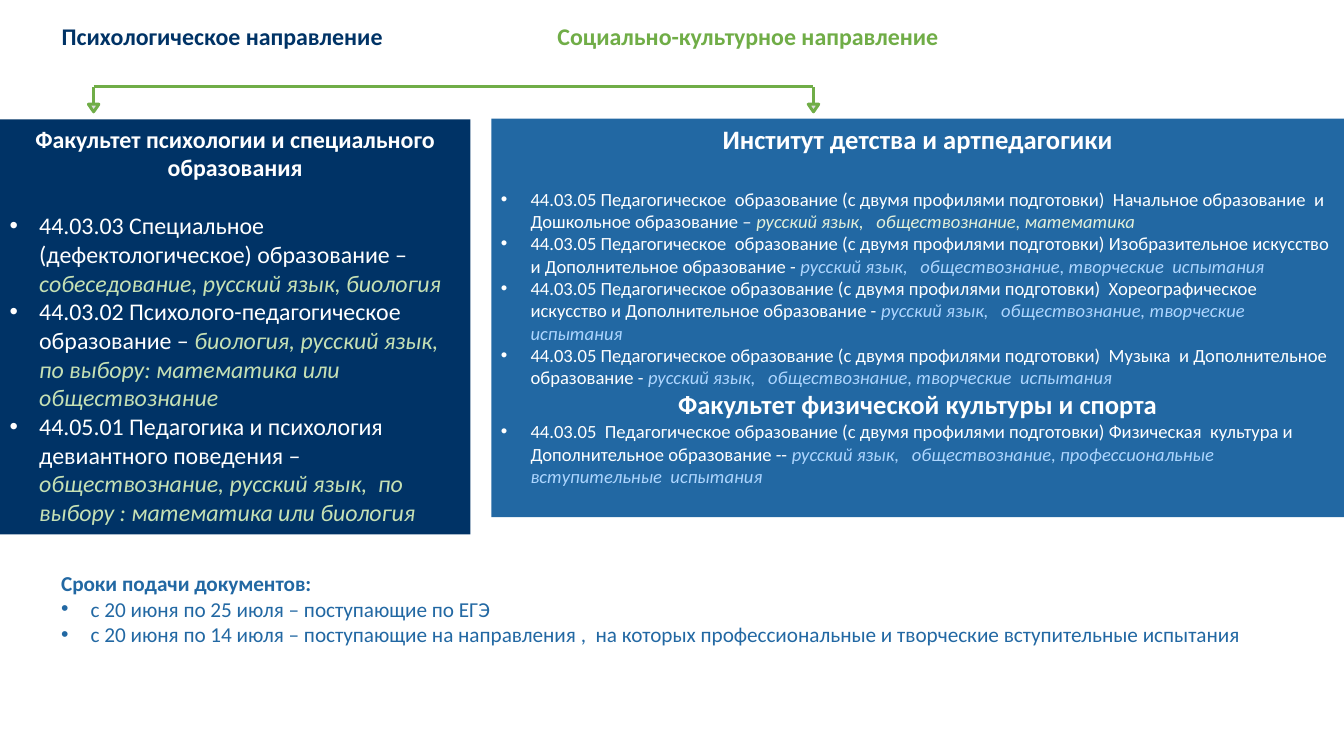
from lxml.etree import SubElement
from pptx import Presentation
from pptx.dml.color import RGBColor
from pptx.enum.shapes import MSO_CONNECTOR, MSO_SHAPE
from pptx.enum.text import MSO_ANCHOR, MSO_AUTO_SIZE, PP_ALIGN
from pptx.oxml.ns import qn
from pptx.util import Inches, Pt

NAVY = RGBColor(0x00, 0x33, 0x66)
BLUE = RGBColor(0x22, 0x68, 0xA3)
GREEN = RGBColor(0x70, 0xAD, 0x47)
SOFT_GREEN = RGBColor(0xC5, 0xE0, 0xB4)
PALE_GREEN = RGBColor(0xE2, 0xF0, 0xD9)
SKY = RGBColor(0xAD, 0xD6, 0xFF)
GREY = RGBColor(0xDE, 0xDE, 0xDE)
WHITE = RGBColor(0xFF, 0xFF, 0xFF)

DIRECTIONS = [
    (1, "Психологическое направление", NAVY, (0, 0.18, 4.65, 0.4)),
    (3, "Социально-культурное направление", GREEN, (5.65, 0.18, 4.35, 0.4)),
]

PSYCHOLOGY = [
    ("44.03.03 Специальное (дефектологическое) образование – ",
     "собеседование, русский язык, биология", SOFT_GREEN),
    ("44.03.02 Психолого-педагогическое образование – ",
     "биология, русский язык, по выбору: математика или обществознание", SOFT_GREEN),
    ("44.05.01 Педагогика и психология девиантного поведения – ",
     "обществознание, русский язык,  по выбору : математика или биология", SOFT_GREEN),
]
CHILDHOOD = [
    ("44.03.05 Педагогическое  образование (с двумя профилями подготовки)  "
     "Начальное образование  и Дошкольное образование – ",
     "русский язык,   обществознание, математика", PALE_GREEN),
    ("44.03.05 Педагогическое  образование (с двумя профилями подготовки) "
     "Изобразительное искусство и Дополнительное образование - ",
     "русский язык,   обществознание, творческие  испытания", SKY),
    ("44.03.05 Педагогическое образование (с двумя профилями подготовки)  "
     "Хореографическое искусство и Дополнительное образование - ",
     "русский язык,   обществознание, творческие  испытания", SKY),
    ("44.03.05 Педагогическое образование (с двумя профилями подготовки)  "
     "Музыка  и Дополнительное образование - ",
     "русский язык,   обществознание, творческие  испытания", SKY),
]
SPORT = [
    ("44.03.05  Педагогическое образование (с двумя профилями подготовки) "
     "Физическая  культура и Дополнительное образование -- ",
     "русский язык,   обществознание, профессиональные вступительные  испытания", SKY),
]
FACULTIES = [
    (2, NAVY, (0, 1.25, 4.92, 4.34), 18, 18, 22,
     [("Факультет психологии и специального образования", PSYCHOLOGY)]),
    (4, BLUE, (5.14, 1.24, 8.92, 4.17), 20, 14, 24.4,
     [("Институт детства и артпедагогики", CHILDHOOD),
      ("Факультет физической культуры и спорта", SPORT)]),
]

DEADLINE_TITLE = "Сроки подачи документов:"
DEADLINES = [
    "с 20 июня по 25 июля – поступающие по ЕГЭ",
    "с 20 июня по 14 июля – поступающие на направления ,  на которых "
    "профессиональные и творческие вступительные испытания",
]

BRACKET_TOP, ARROW_TOP = 0.91, 1.09
ARROW_CENTERS = (0.98, 8.51)
ARROW_WIDTH, ARROW_HEIGHT = 0.11, 0.08


def place(box, bounds):
    box.left, box.top, box.width, box.height = map(Inches, bounds)
    frame = box.text_frame
    frame.word_wrap = True
    frame.auto_size = MSO_AUTO_SIZE.NONE
    frame.vertical_anchor = MSO_ANCHOR.TOP
    return frame


def add_line(frame, spans, size, bullet=False, align=PP_ALIGN.LEFT):
    first = frame.paragraphs[0]
    para = first if not first.runs else frame.add_paragraph()
    properties = para._p.get_or_add_pPr()
    indent = Inches(0.31) if bullet else 0
    properties.set("marL", str(indent))
    properties.set("indent", str(-indent))
    if bullet:
        SubElement(properties, qn("a:buFont")).set("typeface", "Arial")
        SubElement(properties, qn("a:buChar")).set("char", "•")
    else:
        SubElement(properties, qn("a:buNone"))
    para.alignment = align
    para.line_spacing = 1.0
    para.space_before = para.space_after = Pt(0)
    for text, color, bold, italic in spans:
        span = para.add_run()
        span.text = text
        span.font.name = "Calibri"
        span.font.size = Pt(size)
        span.font.bold = bold
        span.font.italic = italic
        span.font.color.rgb = color
    return para


def add_bracket_line(page, start, end):
    line = page.shapes.add_connector(MSO_CONNECTOR.STRAIGHT, *map(Inches, start + end))
    line.line.color.rgb = GREEN
    line.line.width = Pt(2.25)
    SubElement(line._element.spPr, qn("a:effectLst"))


def add_bracket(page):
    left, right = ARROW_CENTERS
    add_bracket_line(page, (left, BRACKET_TOP), (right, BRACKET_TOP))
    for center in ARROW_CENTERS:
        add_bracket_line(page, (center, BRACKET_TOP), (center, ARROW_TOP))
        tip = page.shapes.add_shape(
            MSO_SHAPE.FLOWCHART_MERGE, Inches(center - ARROW_WIDTH / 2),
            Inches(ARROW_TOP), Inches(ARROW_WIDTH), Inches(ARROW_HEIGHT))
        tip.shadow.inherit = False
        tip.fill.solid()
        tip.fill.fore_color.rgb = GREY
        tip.line.color.rgb = GREEN
        tip.line.width = Pt(2.25)


def main():
    deck = Presentation()
    deck.slide_width, deck.slide_height = Inches(14.06), Inches(7.91)
    page = deck.slides.add_slide(deck.slide_layouts.get_by_name("Comparison"))
    title = page.shapes.title._element
    title.getparent().remove(title)
    holders = {holder.placeholder_format.idx: holder for holder in page.placeholders}

    for index, text, color, bounds in DIRECTIONS:
        frame = place(holders[index], bounds)
        add_line(frame, [(text, color, True, False)], 18, align=PP_ALIGN.CENTER)

    for index, fill, bounds, heading_size, size, gap, sections in FACULTIES:
        box = holders[index]
        frame = place(box, bounds)
        box.fill.solid()
        box.fill.fore_color.rgb = fill
        for heading, programs in sections:
            add_line(frame, [(heading, WHITE, True, False)], heading_size,
                     align=PP_ALIGN.CENTER)
            for program, exams, color in programs:
                add_line(frame, [(program, WHITE, False, False),
                                 (exams, color, False, True)], size, bullet=True)
        frame.paragraphs[0].space_after = Pt(gap)

    add_bracket(page)

    box = page.shapes.add_textbox(0, 0, 0, 0)
    frame = place(box, (0.54, 5.92, 12.91, 0.91))
    add_line(frame, [(DEADLINE_TITLE, BLUE, True, False)], 16)
    for deadline in DEADLINES:
        add_line(frame, [(deadline, BLUE, False, False)], 16, bullet=True)

    deck.save("out.pptx")


if __name__ == "__main__":
    main()
